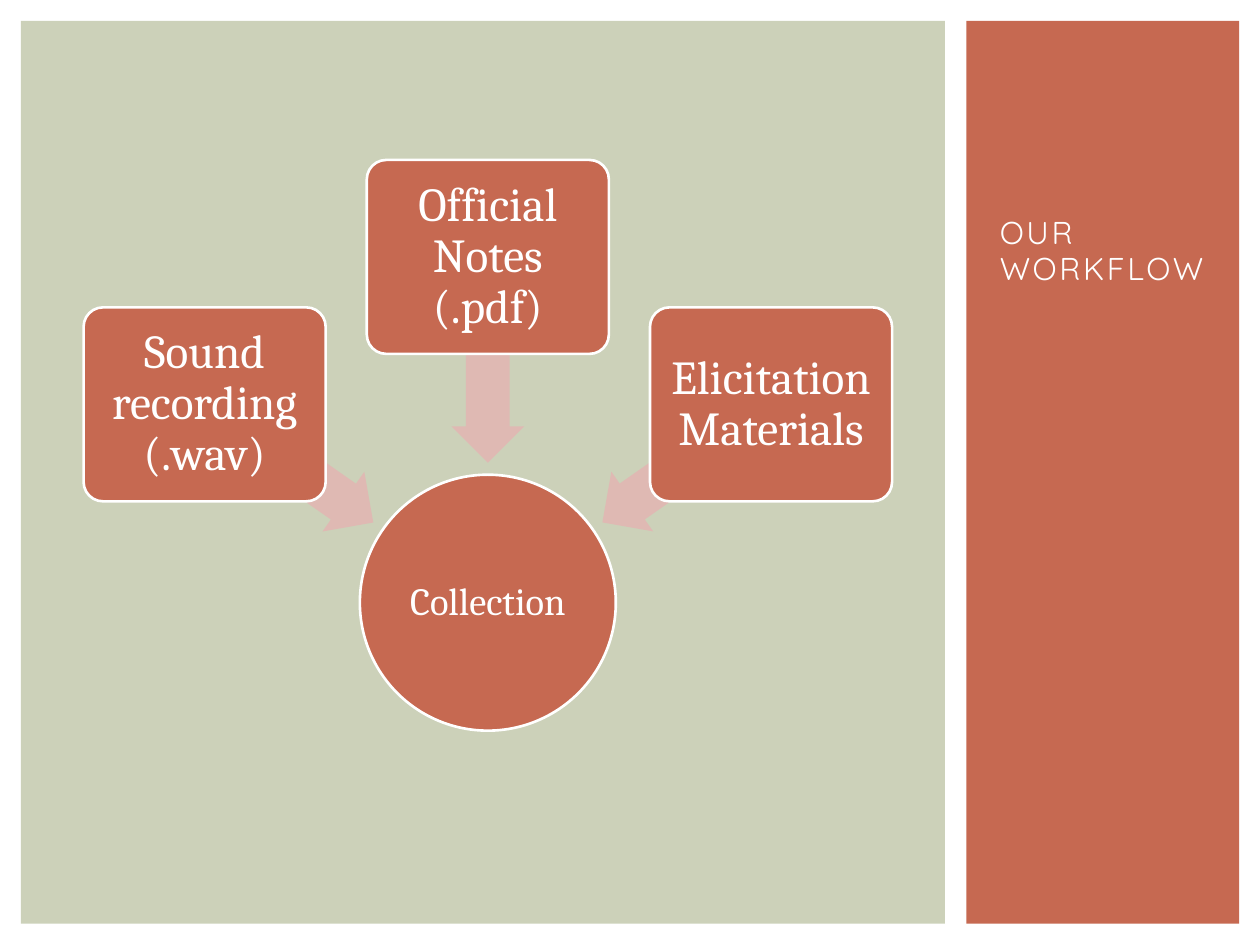
from math import cos, radians, sin

from pptx import Presentation
from pptx.dml.color import RGBColor
from pptx.enum.shapes import MSO_SHAPE
from pptx.enum.text import MSO_ANCHOR, MSO_AUTO_SIZE, PP_ALIGN
from pptx.util import Cm, Pt

RECT, ROUNDED = MSO_SHAPE.RECTANGLE, MSO_SHAPE.ROUNDED_RECTANGLE
OVAL, LEFT_ARROW = MSO_SHAPE.OVAL, MSO_SHAPE.LEFT_ARROW
MIDDLE, BOTTOM = MSO_ANCHOR.MIDDLE, MSO_ANCHOR.BOTTOM
CENTER, LEFT = PP_ALIGN.CENTER, PP_ALIGN.LEFT
NO_AUTOFIT = MSO_AUTO_SIZE.NONE
TITLE_ONLY = 5

WHITE, RUST, SAGE, PINK = "FFFFFF", "C66951", "CCD1B9", "DFB9B3"

# Direction of each source as seen from the collection, in degrees
SOURCES = [
    ("Sound recording (.wav)", 215),
    ("Official Notes (.pdf)", 270),
    ("Elicitation Materials", 325),
]


def color(hex_value):
    return RGBColor.from_string(hex_value)


def add_block(slide, kind, box, fill, outline=None):
    block = slide.shapes.add_shape(kind, *(Cm(length) for length in box))
    block.shadow.inherit = False
    block.fill.solid()
    block.fill.fore_color.rgb = color(fill)
    if outline:
        block.line.color.rgb = color(outline)
        block.line.width = Pt(1.5)
    else:
        block.line.fill.background()
    return block


def write(shape, text, size, font="Cambria", align=CENTER, anchor=MIDDLE,
          line_spacing=0.9, inset=None, tracking=None):
    frame = shape.text_frame
    frame.word_wrap = True
    frame.auto_size = NO_AUTOFIT
    frame.vertical_anchor = anchor
    if inset is not None:
        frame.margin_left = frame.margin_right = Cm(inset)
        frame.margin_top = frame.margin_bottom = Cm(inset)
    paragraph = frame.paragraphs[0]
    paragraph.alignment = align
    paragraph.line_spacing = line_spacing
    run = paragraph.add_run()
    run.text = text
    run.font.name = font
    run.font.size = Pt(size)
    run.font.color.rgb = color(WHITE)
    if tracking:
        run.font._element.set("spc", str(round(tracking * 100)))


def centered_box(center, size):
    return [middle - length / 2 for middle, length in zip(center, size)] + list(size)


def around(center, radius, angle):
    x, y = center
    return x + radius * cos(radians(angle)), y + radius * sin(radians(angle))


def add_sidebar(slide, box):
    left, top, width, _ = box
    add_block(slide, RECT, box, RUST)
    title = slide.shapes.title
    title.left, title.top = Cm(left + 0.42), Cm(top + 0.84)
    title.width, title.height = Cm(width - 0.84), Cm(4.66)
    write(title, "OUR WORKFLOW", 18, font="Quicksand", align=LEFT,
          anchor=BOTTOM, line_spacing=0.95, tracking=1.5)
    slide.shapes._spTree.append(title._element)  # bring in front of the sidebar


def add_workflow(slide, box):
    left, top, width, _ = box
    add_block(slide, RECT, box, SAGE)
    hub = left + width / 2 + 0.1, top + 11.73
    collection = add_block(slide, OVAL, centered_box(hub, (5.16, 5.16)), RUST, WHITE)
    write(collection, "Collection", 22, inset=0.05)

    for label, angle in SOURCES:
        arrow_box = centered_box(around(hub, 4.89, angle), (4.14, 1.47))
        arrow = add_block(slide, LEFT_ARROW, arrow_box, PINK)
        arrow.adjustments[0], arrow.adjustments[1] = 0.6, 0.5
        arrow.rotation = angle

        source_box = centered_box(around(hub, 6.97, angle), (4.88, 3.91))
        source = add_block(slide, ROUNDED, source_box, RUST, WHITE)
        source.adjustments[0] = 0.1
        write(source, label, 27, inset=0.15)


def main():
    presentation = Presentation()
    presentation.slide_width, presentation.slide_height = Cm(25.4), Cm(19.05)
    slide = presentation.slides.add_slide(presentation.slide_layouts[TITLE_ONLY])
    slide.background.fill.solid()
    slide.background.fill.fore_color.rgb = color(WHITE)
    add_sidebar(slide, (19.48, 0.42, 5.5, 18.2))
    add_workflow(slide, (0.42, 0.42, 18.63, 18.2))
    presentation.save("out.pptx")


if __name__ == "__main__":
    main()
